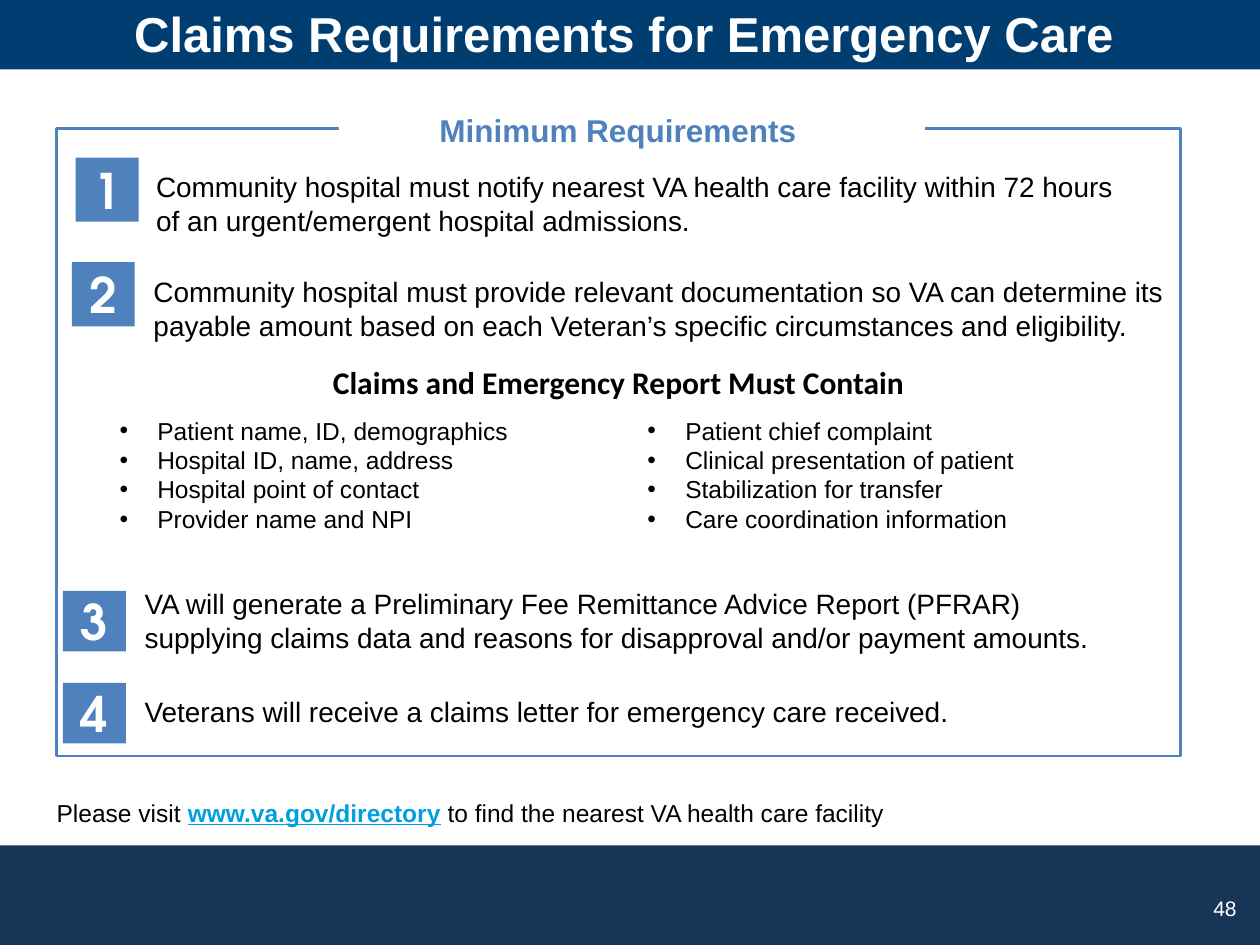
from lxml import etree
from pptx import Presentation
from pptx.dml.color import RGBColor
from pptx.enum.shapes import MSO_SHAPE as Shape
from pptx.enum.text import MSO_ANCHOR as Anchor, PP_ALIGN as Align
from pptx.oxml.ns import qn
from pptx.util import Inches, Pt

NAVY = RGBColor(0x17, 0x35, 0x57)
DARK_BLUE = RGBColor(0x00, 0x3E, 0x71)
BLUE = RGBColor(0x4F, 0x81, 0xBD)
LINK_BLUE = RGBColor(0x00, 0xA0, 0xDE)
BLACK = RGBColor(0, 0, 0)
WHITE = RGBColor(255, 255, 255)

TITLE = "Claims Requirements for Emergency Care"
FRAME_HEADING = "Minimum Requirements"
REPORT_HEADING = "Claims and Emergency Report Must Contain"
VISIT_LINE = ("Please visit ", "www.va.gov/directory",
              " to find the nearest VA health care facility")
PAGE_NUMBER = "48"

# Number square (left, top, width, height), text box, text
REQUIREMENTS = [
    ((0.6, 1.25, 0.5, 0.51), (1.14, 1.3, 7.92, 0.64),
     "Community hospital must notify nearest VA health care facility within "
     "72 hours of an urgent/emergent hospital admissions."),
    ((0.57, 2.08, 0.5, 0.51), (1.12, 2.13, 8.24, 0.64),
     "Community hospital must provide relevant documentation so VA can determine "
     "its payable amount based on each Veteran’s specific circumstances and "
     "eligibility."),
    ((0.5, 4.69, 0.5, 0.48), (1.05, 4.61, 7.96, 0.64),
     "VA will generate a Preliminary Fee Remittance Advice Report (PFRAR) "
     "supplying claims data and reasons for disapproval and/or payment amounts."),
    ((0.5, 5.42, 0.5, 0.48), (1.05, 5.46, 7.96, 0.37),
     "Veterans will receive a claims letter for emergency care received."),
]

REPORT_COLUMNS = [
    ((0.85, 3.25, 4.92, 1.04),
     ["Patient name, ID, demographics", "Hospital ID, name, address",
      "Hospital point of contact", "Provider name and NPI"]),
    ((5.04, 3.25, 3.92, 1.04),
     ["Patient chief complaint", "Clinical presentation of patient",
      "Stabilization for transfer", "Care coordination information"]),
]

presentation = Presentation()
presentation.slide_width, presentation.slide_height = Inches(10), Inches(7.5)
slide = presentation.slides.add_slide(presentation.slide_layouts[6])


def add_rectangle(box, fill=None, line=None):
    shape = slide.shapes.add_shape(Shape.RECTANGLE, *map(Inches, box))
    shape.shadow.inherit = False
    if fill is None:
        shape.fill.background()
    else:
        shape.fill.solid()
        shape.fill.fore_color.rgb = fill
    if line is None:
        shape.line.fill.background()
    else:
        shape.line.color.rgb = line
        shape.line.width = Pt(1.5)
    return shape


def add_text_box(box, inset=True):
    shape = slide.shapes.add_textbox(*map(Inches, box))
    frame = shape.text_frame
    if not inset:
        frame.margin_left = frame.margin_right = 0
        frame.margin_top = frame.margin_bottom = 0
    return shape


def write(shape, lines, size, color=BLACK, bold=False, font="Arial",
          align=Align.LEFT, anchor=Anchor.TOP, bullet=False):
    frame = shape.text_frame
    frame.word_wrap = True
    frame.vertical_anchor = anchor
    for index, line in enumerate(lines):
        paragraph = frame.paragraphs[0] if index == 0 else frame.add_paragraph()
        paragraph.add_run().text = line
        paragraph.alignment = align
        if bullet:
            add_bullet(paragraph)
        paragraph.font.name = font
        paragraph.font.size = Pt(size)
        paragraph.font.bold = bold
        paragraph.font.color.rgb = color
    return frame


def add_bullet(paragraph):
    properties = paragraph._p.get_or_add_pPr()
    properties.set("marL", str(Inches(0.3)))
    properties.set("indent", str(-Inches(0.3)))
    etree.SubElement(properties, qn("a:buFont")).set("typeface", "Arial")
    etree.SubElement(properties, qn("a:buChar")).set("char", "•")


# Footer and title bands
add_rectangle((0, 6.71, 10, 0.79), NAVY)
add_rectangle((0, 0, 10, 0.55), DARK_BLUE)
write(add_text_box((0.45, 0.03, 9, 0.47), inset=False), [TITLE], 28, WHITE,
      bold=True, align=Align.CENTER)

# Directory line and page number
visit_frame = write(add_text_box((0.45, 6.33, 8.97, 0.24), inset=False),
                    VISIT_LINE[:1], 14)
visit_paragraph = visit_frame.paragraphs[0]
address = visit_paragraph.add_run()
address.text = VISIT_LINE[1]
address.font.bold = address.font.underline = True
address.font.color.rgb = LINK_BLUE
visit_paragraph.add_run().text = VISIT_LINE[2]
write(add_text_box((9.63, 7.11, 0.3, 0.3), inset=False), [PAGE_NUMBER], 12, WHITE)

# Frame with its heading set into the top edge
add_rectangle((0.45, 1.02, 8.92, 4.98), line=BLUE)
heading_frame = write(add_rectangle((2.69, 0.83, 4.65, 0.41), WHITE),
                      [FRAME_HEADING], 18, BLUE, bold=True, align=Align.CENTER)
heading_frame.margin_right = Inches(0.32)

# Numbered requirements
for number, (square, text_box, text) in enumerate(REQUIREMENTS, 1):
    write(add_text_box(text_box), [text], 16)
    write(add_rectangle(square, BLUE), [str(number)], 28, WHITE, bold=True,
          font="TeX Gyre Adventor", align=Align.CENTER, anchor=Anchor.MIDDLE)

# Report contents in two columns
write(add_text_box((0.45, 2.83, 8.92, 0.4)), [REPORT_HEADING], 18, bold=True,
      font="Calibri", align=Align.CENTER)
for box, items in REPORT_COLUMNS:
    write(add_text_box(box), items, 14, bullet=True)

presentation.save("out.pptx")
